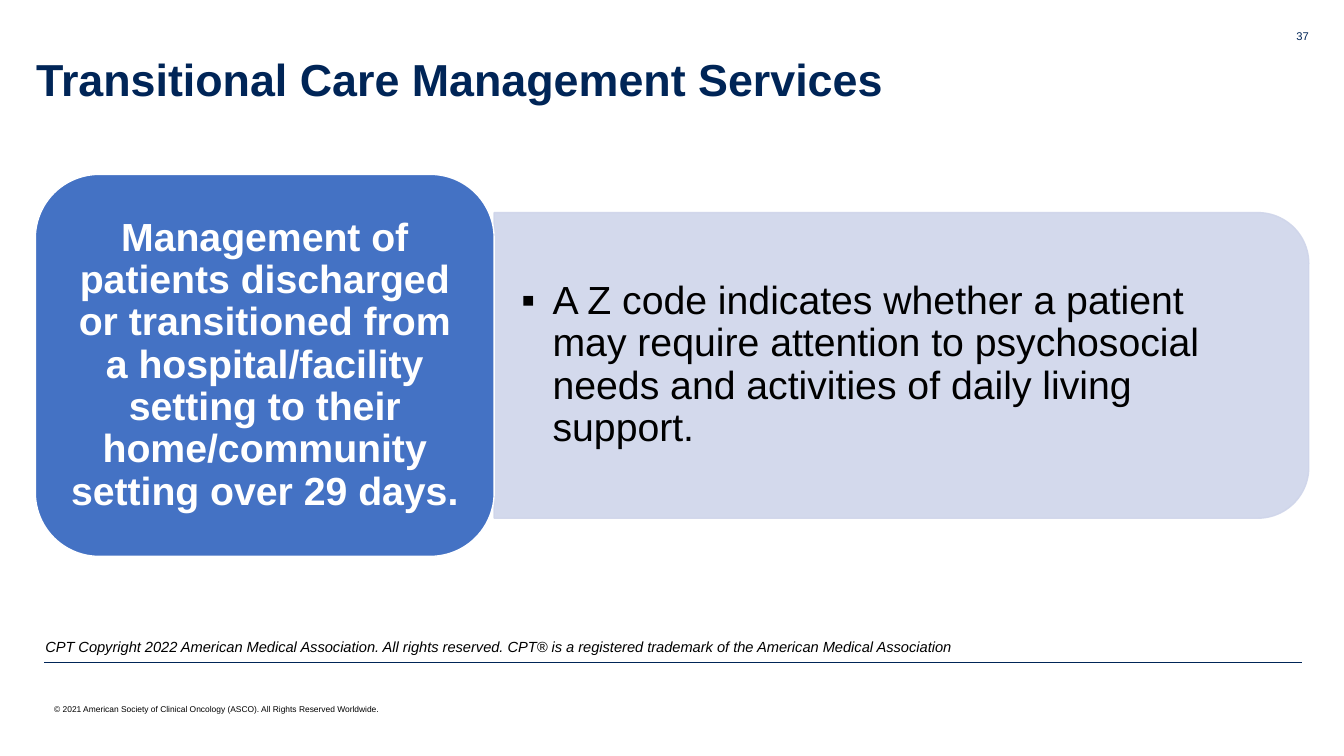
from dataclasses import dataclass

from lxml.etree import SubElement
from pptx import Presentation
from pptx.dml.color import RGBColor
from pptx.enum.shapes import MSO_CONNECTOR, MSO_SHAPE
from pptx.enum.text import MSO_ANCHOR, PP_ALIGN
from pptx.oxml.ns import qn
from pptx.util import Inches, Pt

NAVY, BLUE, PALE, WHITE, BLACK = "002557", "4472C4", "CFD5EA", "FFFFFF", "000000"


@dataclass
class Box:
    """A rectangle in inches."""
    left: float
    top: float
    width: float
    height: float

    def share(self, left, top, width, height):
        """Return an inner box given as percentages of this one."""
        return Box(self.left + self.width * left / 100,
                   self.top + self.height * top / 100,
                   self.width * width / 100, self.height * height / 100)

    def lengths(self):
        """Return left, top, width and height as slide lengths."""
        return [Inches(n) for n in (self.left, self.top, self.width, self.height)]


PAGE = Box(0, 0, 13.33, 7.5)


def color(code):
    """Turn a hex string into a colour."""
    return RGBColor.from_string(code)


def apply(target, formats):
    """Set each attribute in the dict on the target."""
    for name, value in formats.items():
        setattr(target, name, value)


def write(shape, text, size, code, insets=(0.1, 0.05), anchor=MSO_ANCHOR.TOP,
          bullet=None, para_format=None, **font_format):
    """Fill a shape with one formatted paragraph."""
    across, down = (Inches(n) for n in insets)
    frame = shape.text_frame
    apply(frame, {"word_wrap": True, "vertical_anchor": anchor,
                  "margin_left": across, "margin_right": across,
                  "margin_top": down, "margin_bottom": down})
    para = frame.paragraphs[0]
    if bullet:
        props = para._p.get_or_add_pPr()
        indent = Inches(0.31)
        props.set("marL", str(indent))
        props.set("indent", str(-indent))
        SubElement(props, qn("a:buFont"), typeface="Arial")
        SubElement(props, qn("a:buChar"), char=bullet)
    apply(para, para_format or {})
    span = para.add_run()
    span.text = text
    apply(span.font, {"name": "Arial", "size": Pt(size), **font_format})
    span.font.color.rgb = color(code)


def add_text(slide, box, text, size, code, **formats):
    """Place a text box."""
    write(slide.shapes.add_textbox(*box.lengths()), text, size, code, **formats)


def add_block(slide, kind, box, fill, line):
    """Place a filled preset shape with a thin outline."""
    shape = slide.shapes.add_shape(kind, *box.lengths())
    shape.shadow.inherit = False
    shape.fill.solid()
    shape.fill.fore_color.rgb = color(fill)
    shape.line.color.rgb = color(line)
    shape.line.width = Pt(1)
    return shape


def add_header(slide, box):
    """Place the title and the page number."""
    add_text(slide, box.share(1.95, 28, 86.27, 36), "Transitional Care Management Services",
             32, NAVY, anchor=MSO_ANCHOR.MIDDLE, para_format={"line_spacing": 0.9}, bold=True)
    add_text(slide, box.share(91.07, 13.5, 7.05, 22), "37", 8, NAVY,
             para_format={"alignment": PP_ALIGN.RIGHT})


def add_panel(slide, box):
    """Place the pale panel, rounded on its right, with its bullet."""
    upright = Box(box.left + (box.width - box.height) / 2,
                  box.top + (box.height - box.width) / 2, box.height, box.width)
    panel = add_block(slide, MSO_SHAPE.ROUND_2_SAME_RECTANGLE, upright, PALE, PALE)
    panel.rotation = 90
    for tone in panel._element.spPr.iter(qn("a:srgbClr")):
        SubElement(tone, qn("a:alpha"), val="90000")
    add_text(slide, box.share(0, 5, 98.27, 90),
             "A Z code indicates whether a patient may require attention to psychosocial "
             "needs and activities of daily living support.", 28, BLACK,
             insets=(0.27, 0.14), anchor=MSO_ANCHOR.MIDDLE, bullet="▪",
             para_format={"line_spacing": 0.9})


def add_body(slide, box):
    """Place the panel and the blue card beside it."""
    split = 36.03
    add_panel(slide, box.share(split, 10, 100 - split, 80))
    card = add_block(slide, MSO_SHAPE.ROUNDED_RECTANGLE, box.share(0, 0, split, 100), BLUE, WHITE)
    write(card, "Management of patients discharged or transitioned from a hospital/facility "
          "setting to their home/community setting over 29 days.", 28, WHITE,
          insets=(0.12, 0.06), anchor=MSO_ANCHOR.MIDDLE, bold=True,
          para_format={"alignment": PP_ALIGN.CENTER, "line_spacing": 0.9})


def add_footer(slide, box):
    """Place the trademark notice, the rule and the copyright line."""
    rule = box.share(0.7, 30.2, 98.75, 0)
    left, top, width, _ = rule.lengths()
    line = slide.shapes.add_connector(MSO_CONNECTOR.STRAIGHT, left, top, left + width, top)
    line.line.color.rgb = color(NAVY)
    line.line.width = Pt(0.25)
    SubElement(line._element.spPr, qn("a:effectLst"))
    add_text(slide, box.share(0, 0, 75.6, 29.2),
             "CPT Copyright 2022 American Medical Association. All rights reserved. "
             "CPT® is a registered trademark of the American Medical Association",
             10.5, BLACK, italic=True)
    add_text(slide, box.share(0.7, 58.3, 35.6, 41.7),
             "© 2021 American Society of Clinical Oncology (ASCO). All Rights Reserved Worldwide.",
             6, BLACK, anchor=MSO_ANCHOR.MIDDLE)


def main():
    """Build the slide and save the deck."""
    deck = Presentation()
    deck.slide_width, deck.slide_height = Inches(PAGE.width), Inches(PAGE.height)
    slide = deck.slides.add_slide(deck.slide_layouts[6])
    add_header(slide, PAGE.share(0, 0, 100, 23.5))
    add_body(slide, PAGE.share(2.63, 23.07, 94.75, 50.53))
    add_footer(slide, PAGE.share(2.63, 83.73, 94.75, 12.8))
    deck.save("out.pptx")


if __name__ == "__main__":
    main()
